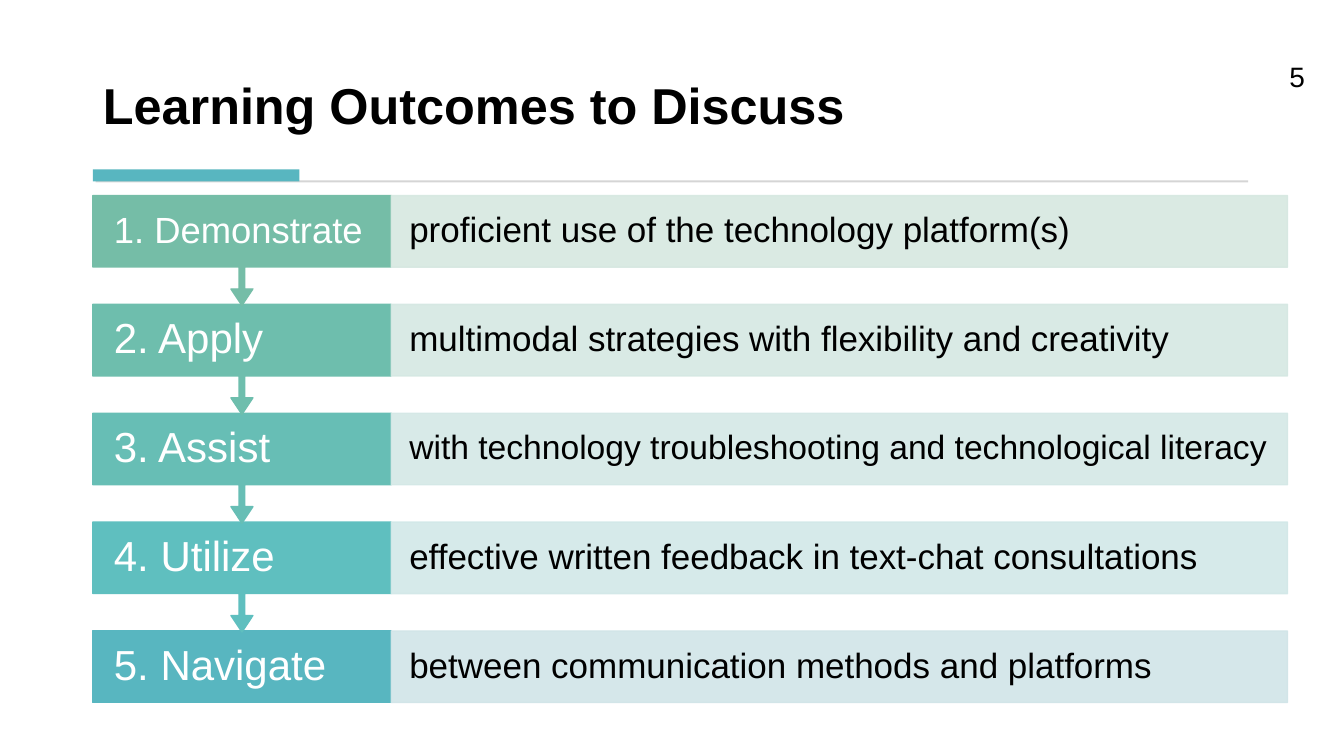
from dataclasses import dataclass

from lxml import etree
from pptx import Presentation
from pptx.dml.color import RGBColor
from pptx.enum.shapes import MSO_SHAPE
from pptx.enum.text import MSO_ANCHOR, PP_ALIGN
from pptx.oxml.ns import qn
from pptx.util import Inches, Pt

RECTANGLE = MSO_SHAPE.RECTANGLE
ARROW_CALLOUT = MSO_SHAPE.DOWN_ARROW_CALLOUT
MIDDLE, BOTTOM = MSO_ANCHOR.MIDDLE, MSO_ANCHOR.BOTTOM
LEFT, RIGHT = PP_ALIGN.LEFT, PP_ALIGN.RIGHT


@dataclass(frozen=True)
class Theme:
    font: str = "Arial"
    black: str = "000000"
    white: str = "FFFFFF"
    rule: str = "D5D5D5"
    accent: str = "58B6C0"
    title_size: int = 36
    number_size: int = 20
    verb_size: int = 30
    long_verb_size: int = 26
    detail_size: int = 25
    long_detail_size: int = 24


theme = Theme()


def add_block(kind, left, top, width, height, color, opacity=100):
    shape = slide.shapes.add_shape(
        kind, Inches(left), Inches(top), Inches(width), Inches(height))
    shape.shadow.inherit = False
    shape.fill.solid()
    shape.fill.fore_color.rgb = RGBColor.from_string(color)
    shape.line.color.rgb = RGBColor.from_string(color)
    shape.line.width = Pt(1)
    if opacity < 100:
        for color_element in shape._element.spPr.iter(qn("a:srgbClr")):
            etree.SubElement(color_element, qn("a:alpha"), val=str(opacity * 1000))
    return shape


def write_text(shape, text, size, color, anchor=MIDDLE, align=LEFT, inset=0.1, bold=False):
    frame = shape.text_frame
    frame.word_wrap = True
    frame.vertical_anchor = anchor
    frame.margin_left = frame.margin_right = Inches(inset)
    frame.margin_top = frame.margin_bottom = Inches(0.05)
    paragraph = frame.paragraphs[0]
    paragraph.alignment = align
    paragraph.line_spacing = 0.9
    run = paragraph.add_run()
    run.text = text
    run.font.name = theme.font
    run.font.size = Pt(size)
    run.font.bold = bold
    run.font.color.rgb = RGBColor.from_string(color)


presentation = Presentation()
presentation.slide_width = Inches(13.33)
presentation.slide_height = Inches(7.5)
slide = presentation.slides.add_slide(presentation.slide_layouts[5])

title = slide.shapes.title
title.left, title.top = Inches(0.92), Inches(0.28)
title.width, title.height = Inches(11.49), Inches(1.11)
write_text(title, "Learning Outcomes to Discuss", theme.title_size, theme.black,
           anchor=BOTTOM, bold=True)

for left, top, width, height, color in [
    (0.95, 1.79, 11.43, 0.02, theme.rule),
    (0.92, 1.68, 2.05, 0.12, theme.accent),
]:
    bar = add_block(RECTANGLE, left, top, width, height, color)
    bar.line.fill.background()

outcomes = [
    ("1. Demonstrate", theme.long_verb_size, "75BDA7",
     "proficient use of the technology platform(s)", theme.detail_size, "D6E8E1"),
    ("2. Apply", theme.verb_size, "6EBEAD",
     "multimodal strategies with flexibility and creativity", theme.detail_size, "D5E8E3"),
    ("3. Assist", theme.verb_size, "67BEB5",
     "with technology troubleshooting and technological literacy",
     theme.long_detail_size, "D4E8E6"),
    ("4. Utilize", theme.verb_size, "5FBFBF",
     "effective written feedback in text-chat consultations", theme.detail_size, "D2E8E8"),
    ("5. Navigate", theme.verb_size, theme.accent,
     "between communication methods and platforms", theme.detail_size, "D1E5E8"),
]
row_left, first_top, row_step, row_height = 0.92, 1.94, 1.08, 0.71
verb_width, detail_width, callout_height = 2.96, 8.89, 1.09
last = len(outcomes) - 1

for index, outcome in reversed(list(enumerate(outcomes))):
    verb, verb_size, verb_color, detail, detail_size, detail_color = outcome
    top = first_top + index * row_step
    if index == last:
        verb_box = add_block(RECTANGLE, row_left, top, verb_width, row_height, verb_color)
    else:
        verb_box = add_block(ARROW_CALLOUT, row_left, top, verb_width, callout_height, verb_color)
        for position, value in enumerate((0.05, 0.1, 0.15, 0.65)):
            verb_box.adjustments[position] = value
    write_text(verb_box, verb, verb_size, theme.white, inset=0.21)
    detail_box = add_block(RECTANGLE, row_left + verb_width, top, detail_width, row_height,
                           detail_color, opacity=90)
    write_text(detail_box, detail, detail_size, theme.black, inset=0.18)

page_number = slide.shapes.add_textbox(Inches(10.04), Inches(0.58), Inches(3), Inches(0.4))
write_text(page_number, "5", theme.number_size, theme.black, align=RIGHT)

presentation.save("out.pptx")
